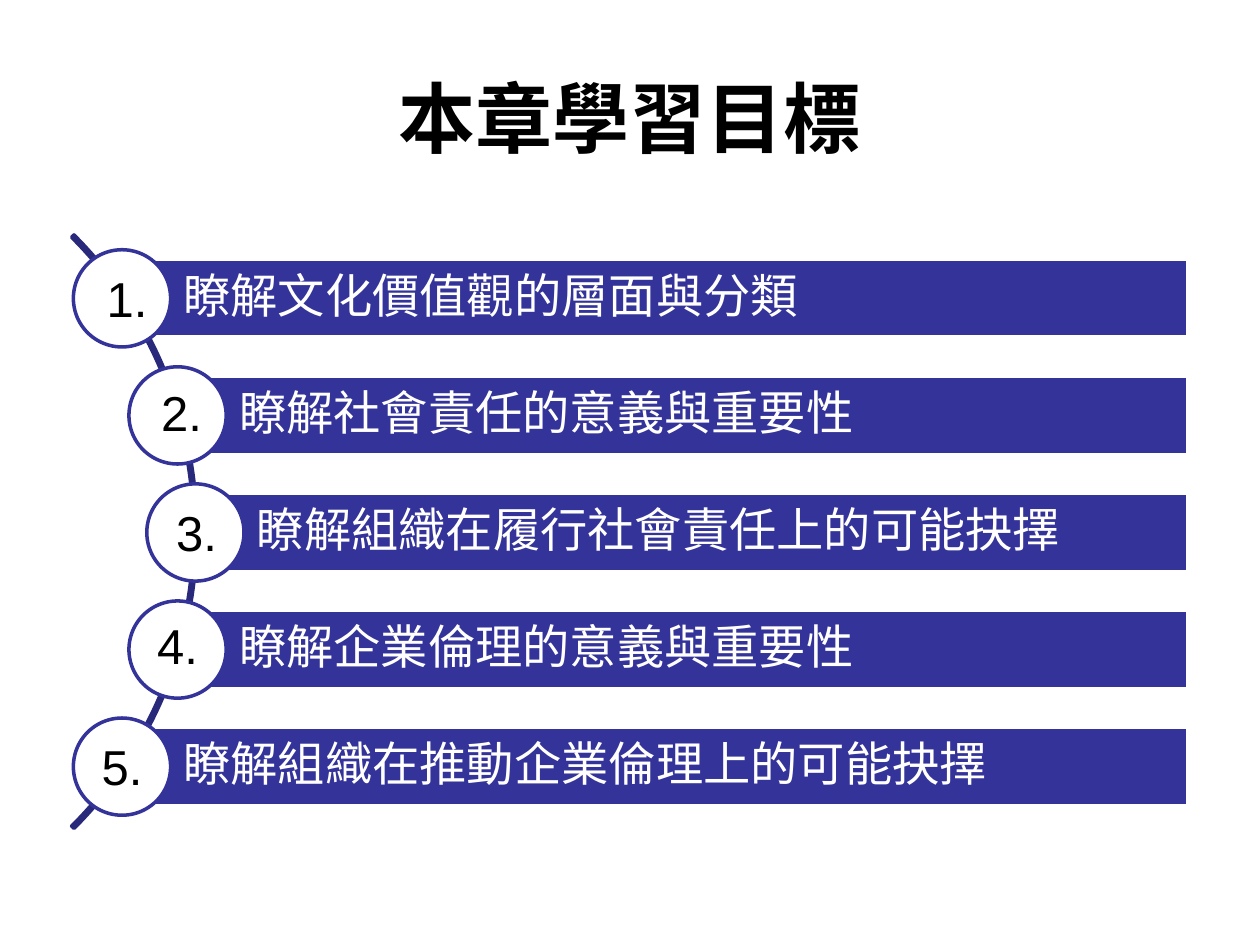
from pptx import Presentation
from pptx import util as u
from pptx.dml.color import RGBColor
from pptx.enum import shapes, text

COLORS = {"bar": "333399", "arc": "29297B", "light": "FFFFFF", "dark": "000000"}

# goal, left edge of its bar, left and top of its number (cm)
GOALS = [
    ("瞭解文化價值觀的層面與分類", 2.46, 1.9, 5.28),
    ("瞭解社會責任的意義與重要性", 3.58, 3.0, 7.59),
    ("瞭解組織在履行社會責任上的可能抉擇", 3.94, 3.3, 10.01),
    ("瞭解企業倫理的意義與重要性", 3.58, 2.92, 12.29),
    ("瞭解組織在推動企業倫理上的可能抉擇", 2.46, 1.8, 14.73),
]
BAR_RIGHT, BAR_TOP, BAR_HEIGHT, BAR_STEP = 23.95, 5.23, 1.57, 2.36
CIRCLE_SIZE = 1.96


def color(name):
    return RGBColor.from_string(COLORS[name])


def add_outlined(slide, kind, box, line, fill=None):
    shape = slide.shapes.add_shape(kind, *map(u.Cm, box))
    shape.shadow.inherit = False
    if fill:
        shape.fill.solid()
        shape.fill.fore_color.rgb = color(fill)
    else:
        shape.fill.background()
    shape.line.color.rgb = color(line)
    shape.line.width = u.Pt(2)
    return shape


def write(frame, words, size, ink, font="Arial", align=text.PP_ALIGN.LEFT, bold=False):
    frame.text = words
    paragraph = frame.paragraphs[0]
    paragraph.alignment = align
    run_font = paragraph.runs[0].font
    run_font.name, run_font.size, run_font.bold = font, u.Pt(size), bold
    run_font.color.rgb = color(ink)
    return paragraph


def add_title(slide, words):
    frame = slide.shapes.add_textbox(*map(u.Cm, (1.27, 0.76, 22.86, 3.18))).text_frame
    frame.word_wrap = True
    frame.vertical_anchor = text.MSO_ANCHOR.MIDDLE
    write(frame, words, 44, "dark", "Times New Roman", text.PP_ALIGN.CENTER, True)


def add_arc(slide):
    arc = add_outlined(slide, shapes.MSO_SHAPE.BLOCK_ARC, (-12.95, 2.26, 16.92, 16.92), "arc")
    for index, value in enumerate((189, 27, 0.004)):
        arc.adjustments[index] = value


def add_bar(slide, words, left, top):
    box = (left, top, BAR_RIGHT - left, BAR_HEIGHT)
    frame = add_outlined(slide, shapes.MSO_SHAPE.RECTANGLE, box, "light", "bar").text_frame
    frame.word_wrap = True
    frame.vertical_anchor = text.MSO_ANCHOR.MIDDLE
    frame.margin_left = u.Cm(1.24)
    frame.margin_right = frame.margin_top = frame.margin_bottom = u.Cm(0.18)
    write(frame, words, 27, "light").line_spacing = 0.9


def add_circle(slide, left, top):
    """Centre a circle on the left edge of the bar."""
    box = (left - CIRCLE_SIZE / 2, top + (BAR_HEIGHT - CIRCLE_SIZE) / 2, CIRCLE_SIZE, CIRCLE_SIZE)
    add_outlined(slide, shapes.MSO_SHAPE.OVAL, box, "bar", "light")


def add_number(slide, number, left, top):
    frame = slide.shapes.add_textbox(*map(u.Cm, (left, top, 1.63, 1.45))).text_frame
    frame.word_wrap = False
    frame.auto_size = text.MSO_AUTO_SIZE.SHAPE_TO_FIT_TEXT
    write(frame, f"{number}.", 28, "dark")


def main():
    deck = Presentation()
    deck.slide_width, deck.slide_height = u.Cm(25.4), u.Cm(19.05)
    slide = deck.slides.add_slide(deck.slide_layouts[6])
    add_title(slide, "本章學習目標")
    add_arc(slide)
    for index, (goal, left, number_left, number_top) in enumerate(GOALS):
        top = BAR_TOP + index * BAR_STEP
        add_bar(slide, goal, left, top)
        add_circle(slide, left, top)
        add_number(slide, index + 1, number_left, number_top)
    deck.save("out.pptx")


if __name__ == "__main__":
    main()
